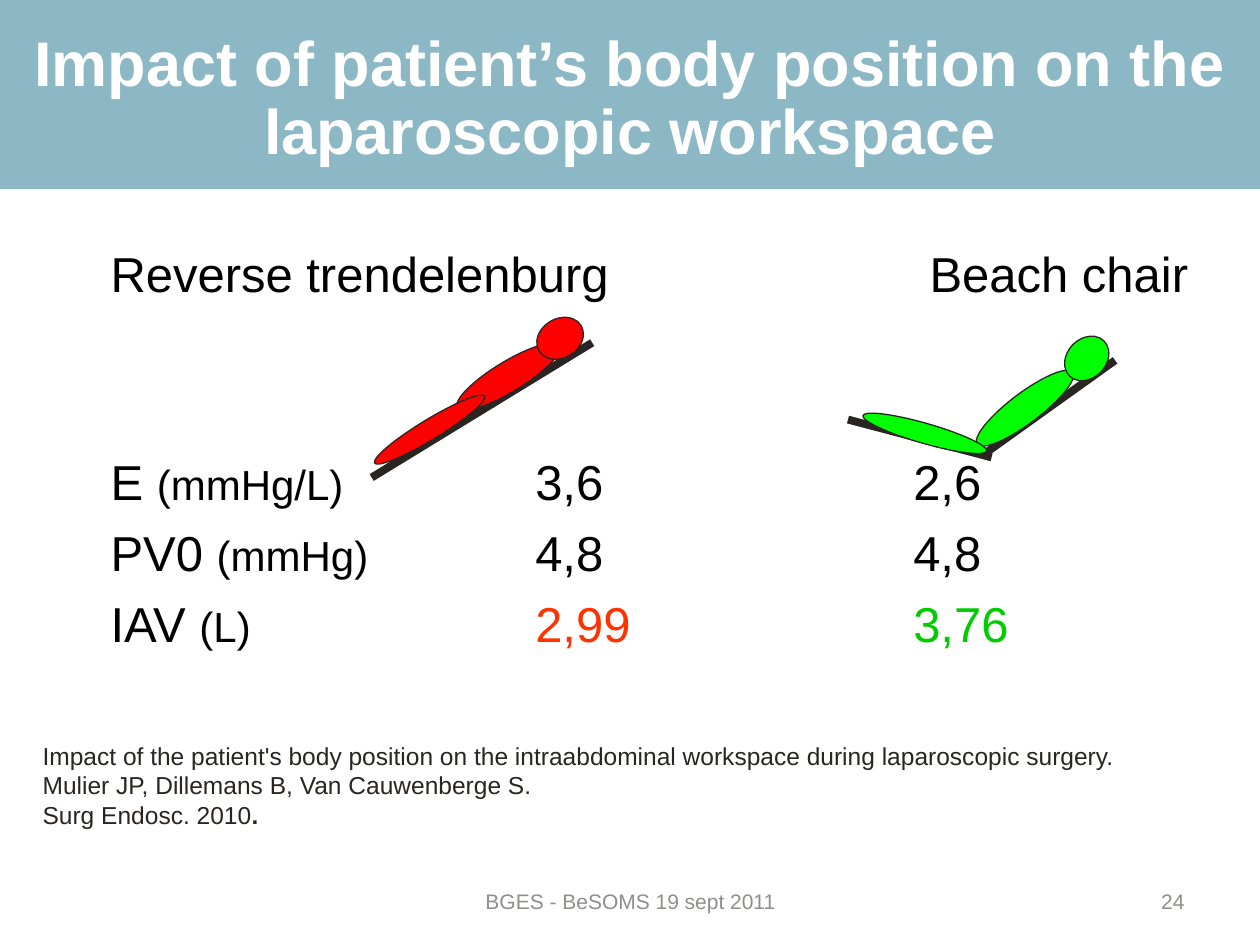
from pptx import Presentation
from pptx.dml.color import RGBColor as Rgb
from pptx.enum.shapes import MSO_CONNECTOR as Link, MSO_SHAPE as Kind
from pptx.enum.text import MSO_ANCHOR as Anchor, MSO_AUTO_SIZE as Fit, PP_ALIGN as Align
from pptx.oxml.ns import qn
from pptx.util import Inches, Pt
from lxml.etree import SubElement as Sub

TITLE = "Impact of patient’s body position on the laparoscopic workspace"
HEADS = [("Reverse trendelenburg\t\tBeach chair", "main", "black")]
ROWS = [
    HEADS,
    [("E ", "main", "black"), ("(mmHg/L)", "unit", "black"), ("\t3,6\t2,6", "main", "black")],
    [("PV0 ", "main", "black"), ("(mmHg)", "unit", "black"), ("\t4,8\t4,8", "main", "black")],
    [("IAV ", "main", "black"), ("(L)", "unit", "black"),
     ("\t2,99", "main", "bad"), ("\t3,76", "main", "good")],
]
CITE = [
    [("Impact of the patient's body position on the intraabdominal workspace "
      "during laparoscopic surgery.", "cite", "ink")],
    [("Mulier JP, Dillemans B, Van Cauwenberge S.", "cite", "ink")],
    [("Surg Endosc. 2010", "cite", "ink"), (".", "cite", "ink", True)],
]
FOOT = [
    ("24", (7.17, 6.95, 2.33, 0.4), Align.RIGHT),
    ("BGES - BeSOMS 19 sept 2011", (3.42, 6.95, 3.17, 0.4), Align.CENTER),
]
TORSO, HEAD, LEGS = (0.95, 0.24), (0.39, 0.31), (1.02, 0.16)
BODIES = [
    ("red", [
        ("bed", (2.95, 3.79), (4.7, 2.72)),
        (TORSO, (3.56, 2.87), 328.7),
        (HEAD, (4.25, 2.53), 328.7),
        (LEGS, (2.9, 3.33), 328.7),
    ]),
    ("green", [
        ("bed", (7.83, 3.59), (8.85, 2.86)),
        (TORSO, (7.66, 3.12), 323),
        (HEAD, (8.43, 2.69), 314.4),
        ("bed", (6.73, 3.33), (7.87, 3.63)),
        (LEGS, (6.83, 3.36), 16),
    ]),
]
TABS = (3.37, 6.37)
GAPS = (0, 85.5, 6.9, 6.9)

THEME = {
    "font": "Arial",
    "size": {"title": 36, "main": 28, "unit": 24, "cite": 14, "foot": 12},
    "line": {"bed": 4.5, "edge": 0.75},
    "color": {
        "band": "8CB8C6", "white": "FFFFFF", "black": "000000", "ink": "292523",
        "gray": "8E8E8D", "bad": "FF3300", "good": "00CC00",
        "red": "FF0000", "green": "00FF00",
    },
}


def tint(name):
    return Rgb.from_string(THEME["color"][name])


def style(font, size, color, bold=False):
    font.name = THEME["font"]
    font.size = Pt(THEME["size"][size])
    font.color.rgb = tint(color)
    font.bold = bold


def write(frame, lines):
    for i, runs in enumerate(lines):
        para = frame.paragraphs[0] if i == 0 else frame.add_paragraph()
        for text, *look in runs:
            run = para.add_run()
            run.text = text
            style(run.font, *look)


def add_box(slide, at, lines, wrap=True):
    frame = slide.shapes.add_textbox(*map(Inches, at)).text_frame
    frame.word_wrap = wrap
    write(frame, lines)
    return frame


def add_title(slide):
    band = slide.shapes.add_shape(Kind.RECTANGLE, 0, 0, Inches(10), Inches(1.5))
    band.shadow.inherit = False
    band.fill.solid()
    band.fill.fore_color.rgb = tint("band")
    band.line.fill.background()
    slide.shapes._spTree.insert(2, band._element)

    title = slide.shapes.title
    title.left, title.top, title.width, title.height = map(Inches, (0, 0.17, 10, 1.25))
    frame = title.text_frame
    frame.text = TITLE
    frame.auto_size = Fit.NONE
    frame.vertical_anchor = Anchor.MIDDLE
    para = frame.paragraphs[0]
    para.alignment = Align.CENTER
    para.line_spacing = 0.9
    style(para.runs[0].font, "title", "white", True)


def add_rows(slide):
    frame = add_box(slide, (0.78, 1.88, 8.9, 3.4), ROWS)
    for para, gap in zip(frame.paragraphs, GAPS):
        para.space_before = Pt(gap)
        stops = Sub(para._p.get_or_add_pPr(), qn("a:tabLst"))
        for tab in TABS:
            Sub(stops, qn("a:tab"), pos=str(Inches(tab)), algn="l")


def add_bed(group, start, end):
    bed = group.shapes.add_connector(Link.STRAIGHT, *map(Inches, start + end))
    bed.line.width = Pt(THEME["line"]["bed"])
    bed.line.color.rgb = tint("ink")
    Sub(bed._element.spPr, qn("a:effectLst"))


def add_part(group, size, at, turn, color):
    part = group.shapes.add_shape(Kind.OVAL, *map(Inches, at + size))
    part.rotation = turn
    part.shadow.inherit = False
    part.fill.solid()
    part.fill.fore_color.rgb = tint(color)
    part.line.color.rgb = tint("ink")
    part.line.width = Pt(THEME["line"]["edge"])


def add_body(slide, color, parts):
    group = slide.shapes.add_group_shape()
    for kind, at, last in parts:
        if kind == "bed":
            add_bed(group, at, last)
        else:
            add_part(group, kind, at, last, color)


def main():
    deck = Presentation()
    deck.slide_width, deck.slide_height = Inches(10), Inches(7.5)
    slide = deck.slides.add_slide(deck.slide_layouts[5])
    add_title(slide)
    add_rows(slide)
    add_box(slide, (0.24, 5.83, 8.77, 0.81), CITE, False)
    for color, parts in BODIES:
        add_body(slide, color, parts)
    for text, at, align in FOOT:
        frame = add_box(slide, at, [[(text, "foot", "gray")]])
        frame.vertical_anchor = Anchor.MIDDLE
        frame.paragraphs[0].alignment = align
    deck.save("out.pptx")


if __name__ == "__main__":
    main()
